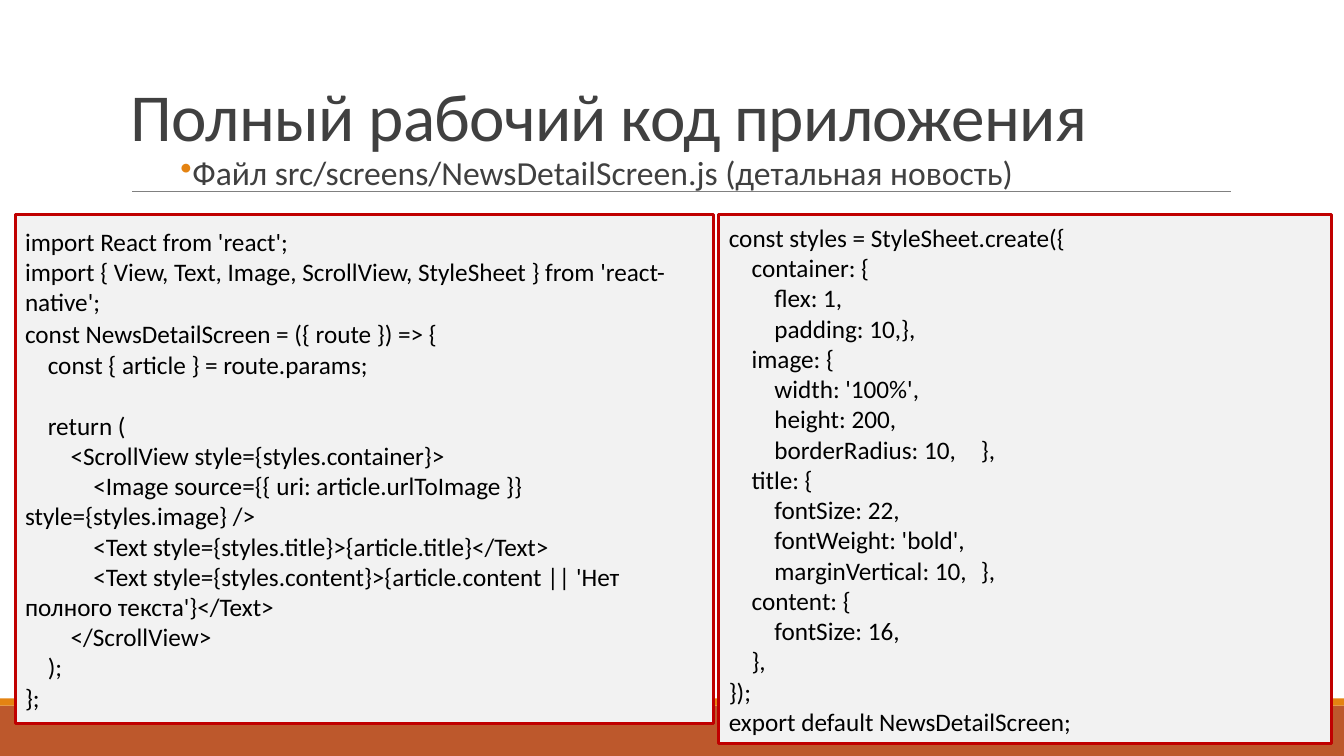
from dataclasses import dataclass

from lxml import etree
from pptx import Presentation
from pptx.dml.color import RGBColor
from pptx.enum.shapes import MSO_CONNECTOR, MSO_SHAPE
from pptx.enum.text import MSO_ANCHOR, MSO_AUTO_SIZE, PP_ALIGN
from pptx.oxml.ns import qn
from pptx.util import Inches, Pt

RECT = MSO_SHAPE.RECTANGLE
STRAIGHT = MSO_CONNECTOR.STRAIGHT
TOP, MIDDLE, BOTTOM = MSO_ANCHOR.TOP, MSO_ANCHOR.MIDDLE, MSO_ANCHOR.BOTTOM
LEFT = PP_ALIGN.LEFT
NO_FIT = MSO_AUTO_SIZE.NONE


@dataclass(frozen=True)
class Theme:
    font: str = "Calibri"
    heading: str = "404040"
    code: str = "000000"
    panel: str = "F2F2F2"
    border: str = "C00000"
    rule: str = "808080"
    band: str = "BD582C"
    accent: str = "E48312"
    title_size: int = 48
    subtitle_size: int = 24
    code_size: int = 18


THEME = Theme()
CODE_INDENT = 0.226

# Each code line: (level, text, space before in points, tab stop in inches)
SCREEN_CODE = [
    (0, "import React from 'react';"),
    (0, "import { View, Text, Image, ScrollView, StyleSheet } from 'react-native';"),
    (0, "const NewsDetailScreen = ({ route }) => {", 1.2),
    (1, "const { article } = route.params;"),
    (1, "return (", 22),
    (2, "<ScrollView style={styles.container}>"),
    (3, "<Image source={{ uri: article.urlToImage }} style={styles.image} />"),
    (3, "<Text style={styles.title}>{article.title}</Text>"),
    (3, "<Text style={styles.content}>{article.content || 'Нет полного текста'}</Text>"),
    (2, "</ScrollView>"),
    (1, ");"),
    (0, "};"),
]
STYLES_CODE = [
    (0, "const styles = StyleSheet.create({"),
    (1, "container: {"),
    (2, "flex: 1,"),
    (2, "padding: 10,},"),
    (1, "image: {"),
    (2, "width: '100%',"),
    (2, "height: 200,"),
    (2, "borderRadius: 10,\t},", 0, 2.47),
    (1, "title: {"),
    (2, "fontSize: 22,"),
    (2, "fontWeight: 'bold',"),
    (2, "marginVertical: 10,\t},", 0, 2.57),
    (1, "content: {"),
    (2, "fontSize: 16,"),
    (1, "},"),
    (0, "});"),
    (0, "export default NewsDetailScreen;"),
]


def rgb(color):
    return RGBColor.from_string(color)


def add_run(p, text, size, color):
    r = p.add_run()
    r.text = text
    r.font.name = THEME.font
    r.font.size = Pt(size)
    r.font.color.rgb = rgb(color)
    return r


def set_indent(p, margin, first):
    pPr = p._p.get_or_add_pPr()
    pPr.set("marL", str(Inches(margin)))
    pPr.set("indent", str(Inches(first)))
    return pPr


def add_bullet(pPr, char, color):
    buClr = etree.SubElement(pPr, qn("a:buClr"))
    etree.SubElement(buClr, qn("a:srgbClr"), val=color)
    etree.SubElement(pPr, qn("a:buChar"), char=char)


def add_tab_stop(pPr, position):
    tabs = etree.SubElement(pPr, qn("a:tabLst"))
    etree.SubElement(tabs, qn("a:tab"), pos=str(Inches(position)), algn="l")


def add_rect(s, box, fill, border=None):
    sp = s.shapes.add_shape(RECT, *map(Inches, box))
    sp.shadow.inherit = False
    sp.fill.solid()
    sp.fill.fore_color.rgb = rgb(fill)
    if border:
        sp.line.color.rgb = rgb(border)
        sp.line.width = Pt(2.25)
    else:
        sp.line.fill.background()
    return sp


def add_rule(s, left, right, top):
    line = s.shapes.add_connector(
        STRAIGHT, Inches(left), Inches(top), Inches(right), Inches(top))
    line.line.color.rgb = rgb(THEME.rule)
    line.line.width = Pt(0.5)
    etree.SubElement(line._element.spPr, qn("a:effectLst"))


def add_text(s, box, text, size, anchor, line_spacing):
    tf = s.shapes.add_textbox(*map(Inches, box)).text_frame
    tf.word_wrap = True
    tf.auto_size = NO_FIT
    tf.vertical_anchor = anchor
    p = tf.paragraphs[0]
    p.line_spacing = line_spacing
    return tf, p, add_run(p, text, size, THEME.heading)


def add_title(s, text):
    _, _, r = add_text(s, (1.2, 0, 11, 1.59), text, THEME.title_size, BOTTOM, 0.85)
    r._r.get_or_add_rPr().set("spc", "-50")


def add_subtitle(s, text):
    tf, p, _ = add_text(s, (1.3, 1.5, 11, 4.4), text, THEME.subtitle_size, TOP, 0.9)
    tf.margin_left = tf.margin_right = 0
    p.space_before, p.space_after = Pt(12), Pt(2)
    add_bullet(set_indent(p, 0.2, 0.29), "•", THEME.accent)


def add_code_line(p, level, text, before=0, tab=None):
    p.alignment = LEFT
    p.space_before = Pt(before)
    pPr = set_indent(p, 0, level * CODE_INDENT)
    if tab:
        add_tab_stop(pPr, tab)
    add_run(p, text, THEME.code_size, THEME.code)


def add_code_panel(s, box, lines):
    tf = add_rect(s, box, THEME.panel, THEME.border).text_frame
    tf.word_wrap = True
    tf.vertical_anchor = MIDDLE
    for i, line in enumerate(lines):
        p = tf.add_paragraph() if i else tf.paragraphs[0]
        add_code_line(p, *line)


def main():
    prs = Presentation()
    prs.slide_width, prs.slide_height = Inches(13.33), Inches(7.5)
    s = prs.slides.add_slide(prs.slide_layouts[6])
    add_rect(s, (0, 7, 13.33, 0.5), THEME.band)
    add_rect(s, (0, 6.93, 13.33, 0.07), THEME.accent)
    add_rule(s, 1.31, 12.21, 1.9)
    add_title(s, "Полный рабочий код приложения")
    add_subtitle(s, "Файл src/screens/NewsDetailScreen.js (детальная новость)")
    add_code_panel(s, (0.15, 2.13, 6.93, 5.05), SCREEN_CODE)
    add_code_panel(s, (7.13, 2.13, 6.08, 5.25), STYLES_CODE)
    prs.save("out.pptx")


if __name__ == "__main__":
    main()
